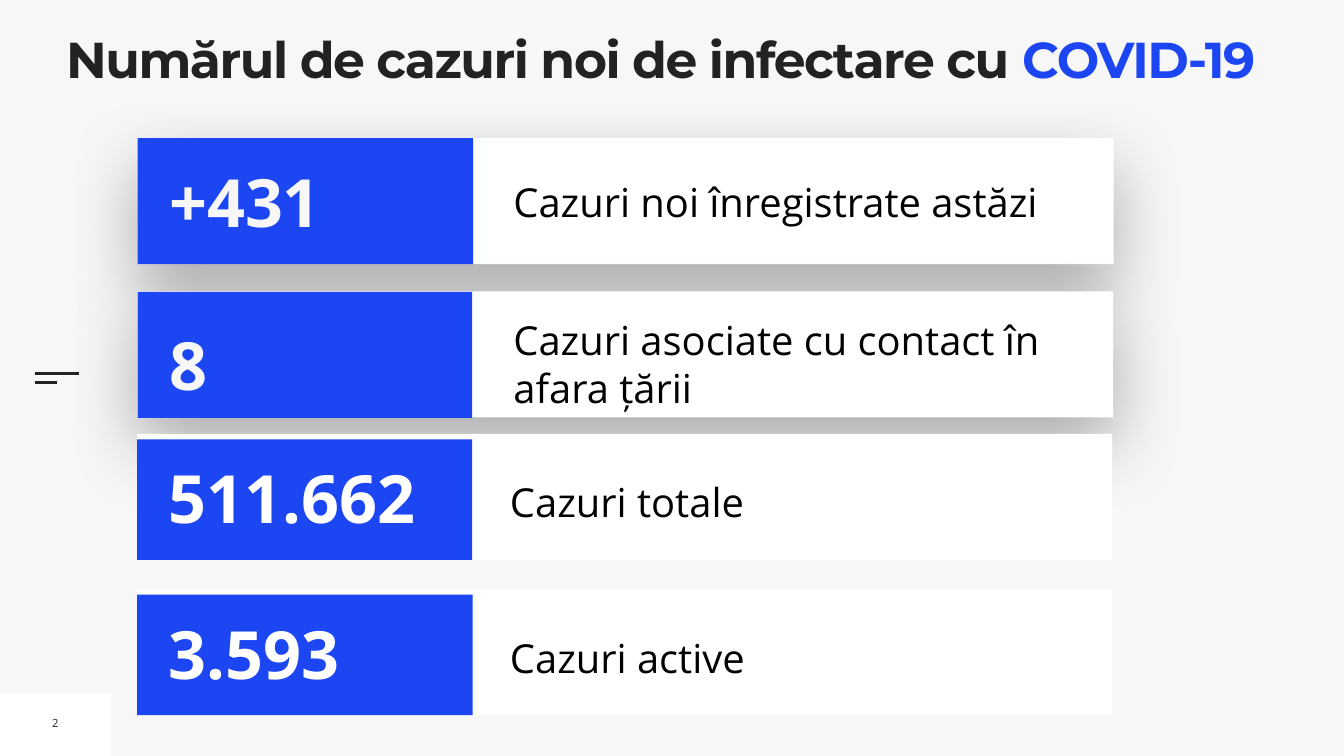
from lxml.etree import SubElement
from pptx import Presentation
from pptx.dml.color import RGBColor
from pptx.enum.shapes import MSO_CONNECTOR, MSO_SHAPE
from pptx.enum.text import MSO_ANCHOR, MSO_AUTO_SIZE, PP_ALIGN
from pptx.oxml.ns import qn
from pptx.util import Pt

PX = 9144
HUES = {
    "back": "F7F7F7",
    "card": "FEFFFF",
    "blue": "1D46F3",
    "dark": "222222",
    "black": "000000",
    "white": "FFFFFF",
}
BODY = "Open Sans"
HEAD = "Montserrat"


def hue(name):
    return RGBColor.from_string(HUES[name])


def scale(box):
    return [n * PX for n in box]


def add_run(para, text, size, color, font=BODY, bold=False):
    run = para.add_run()
    run.text = text
    run.font.name = font
    run.font.size = Pt(size)
    run.font.bold = bold
    run.font.color.rgb = hue(color)
    return run


def set_frame(frame, inset, anchor, wrap=True):
    frame.margin_left = frame.margin_right = inset * PX
    frame.margin_top = frame.margin_bottom = inset * PX
    frame.vertical_anchor = anchor
    frame.word_wrap = wrap


def add_rect(shapes, box, color):
    rect = shapes.add_shape(MSO_SHAPE.RECTANGLE, *scale(box))
    rect.shadow.inherit = False
    rect.fill.solid()
    rect.fill.fore_color.rgb = hue(color)
    rect.line.fill.background()
    return rect


def add_glow(rect):
    effects = rect._element.spPr.find(qn("a:effectLst"))
    glow = SubElement(effects, qn("a:outerShdw"), blurRad=str(Pt(100)),
                      dist=str(Pt(40)), dir="5400000", algn="ctr", rotWithShape="0")
    tint = SubElement(glow, qn("a:srgbClr"), val=HUES["black"])
    SubElement(tint, qn("a:alpha"), val="30000")


def add_text(shapes, box, text, size, color, bold=False, inset=10, wrap=True):
    frame = shapes.add_textbox(*scale(box)).text_frame
    set_frame(frame, inset, MSO_ANCHOR.MIDDLE, wrap)
    frame.auto_size = MSO_AUTO_SIZE.SHAPE_TO_FIT_TEXT
    para = frame.paragraphs[0]
    add_run(para, text, size, color, bold=bold)
    return para


def add_line(shapes, left, right, top):
    ends = scale((left, top, right, top))
    line = shapes.add_connector(MSO_CONNECTOR.STRAIGHT, *ends)
    line.line.color.rgb = hue("dark")
    line.line.width = Pt(3)
    SubElement(line._element.spPr, qn("a:effectLst"))


def add_title(slide):
    title = slide.shapes.title
    title.left, title.top, title.width, title.height = scale((131, 78, 2394, 158))
    frame = title.text_frame
    set_frame(frame, 0, MSO_ANCHOR.TOP)
    frame.auto_size = MSO_AUTO_SIZE.NONE
    para = frame.paragraphs[0]
    para.alignment = PP_ALIGN.LEFT
    para.line_spacing = 0.8
    parts = [("Numărul de cazuri noi de infectare cu ", "dark"), ("COVID-19", "blue")]
    for text, color in parts:
        run = add_run(para, text, 72, color, HEAD, True)
        run.font._element.set("spc", "-200")


def add_row(slide, count, label, card, tile, figure, note, raised):
    shapes = slide.shapes.add_group_shape().shapes
    back = add_rect(shapes, card, "card")
    if raised:
        add_glow(back)
    para = add_text(shapes, note, label, 57, "black", inset=10 if raised else 0)
    if not raised:
        para.line_spacing = 1.3
        para.space_before = Pt(20)
    add_rect(shapes, tile, "blue")
    color = "back" if raised else "white"
    add_text(shapes, figure, count, 95, color, bold=True)


def main():
    deck = Presentation()
    deck.slide_width, deck.slide_height = scale((2667, 1500))
    slide = deck.slides.add_slide(deck.slide_layouts[5])
    slide.background.fill.solid()
    slide.background.fill.fore_color.rgb = hue("back")

    shapes = slide.shapes
    add_rect(shapes, (0, 1376, 220, 124), "card")
    add_line(shapes, 69, 157, 741)
    add_line(shapes, 69, 113, 759)
    page = add_text(shapes, (93, 1409, 34, 51), "2", 16, "dark", wrap=False)
    page.alignment = PP_ALIGN.CENTER
    add_title(slide)

    rows = [
        ("3.593", "Cazuri active", (272, 1169, 1935, 250), (272, 1180, 666, 239),
         (325, 1205, 603, 180), (1012, 1227, 1158, 125), False),
        ("+431", "Cazuri noi înregistrate astăzi", (273, 274, 1937, 250),
         (273, 274, 666, 250), (326, 309, 603, 180), (1009, 341, 1176, 116), True),
        ("8", "Cazuri asociate cu contact în afara țării", (272, 578, 1937, 250),
         (273, 579, 664, 250), (326, 632, 603, 180), (1009, 616, 1176, 212), True),
        ("511.662", "Cazuri totale", (272, 861, 1935, 250), (272, 872, 665, 239),
         (325, 896, 603, 180), (1012, 925, 1158, 112), False),
    ]
    for row in rows:
        add_row(slide, *row)
    deck.save("out.pptx")


if __name__ == "__main__":
    main()
